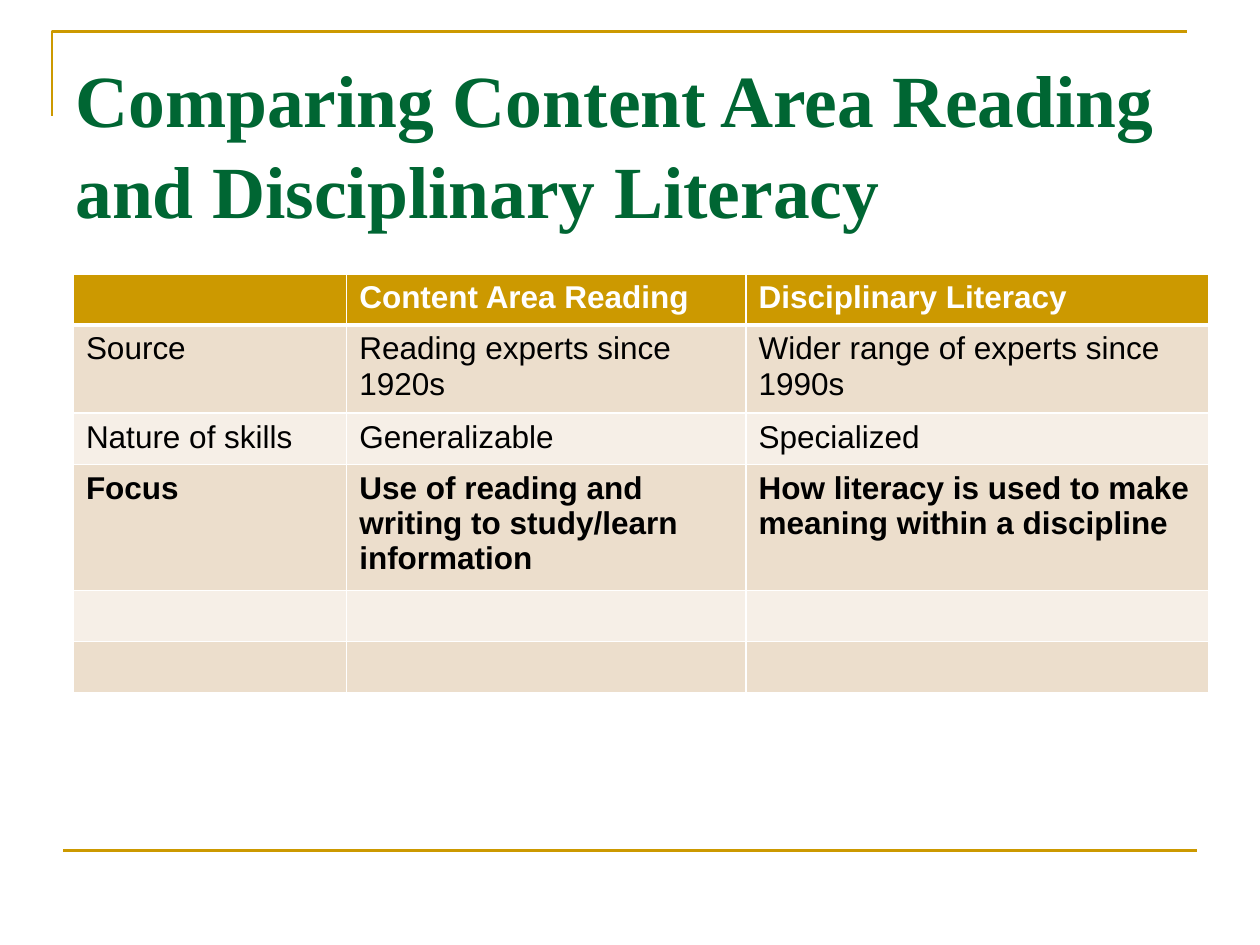
from lxml import etree
from pptx import Presentation
from pptx import util as u
from pptx.dml.color import RGBColor
from pptx.enum import shapes, text
from pptx.oxml import ns

GOLD = RGBColor(0xCC, 0x99, 0x00)
GREEN = RGBColor(0x00, 0x66, 0x33)
WHITE = RGBColor(0xFF, 0xFF, 0xFF)
BLACK = RGBColor(0x00, 0x00, 0x00)
BANDS = RGBColor(0xF6, 0xEF, 0xE7), RGBColor(0xEC, 0xDE, 0xCC)

COLUMNS = [5.51, 8.05, 9.32]
ROW_HEIGHT = 1.03
BOLD_ROWS = {0, 3}
ROWS = [
    ["", "Content Area Reading", "Disciplinary Literacy"],
    ["Source", "Reading experts since 1920s", "Wider range of experts since 1990s"],
    ["Nature of skills", "Generalizable", "Specialized"],
    ["Focus", "Use of reading and writing to study/learn information",
     "How literacy is used to make meaning within a discipline"],
    ["", "", ""],
    ["", "", ""],
]


class Deck:
    """Holds the style and the current slide, and draws each kind of element."""

    def __init__(self, prs):
        self.s = prs.slides.add_slide(prs.slide_layouts[6])
        self.title_font, self.body_font = "Times New Roman", "Arial"
        self.rule = u.Pt(1.5)

    def stroke(self, sp):
        sp.line.color.rgb = GOLD
        sp.line.width = self.rule

    def corner(self, points):
        start, *rest = [(u.Cm(x), u.Cm(y)) for x, y in points]
        fb = self.s.shapes.build_freeform(*start)
        fb.add_line_segments(rest, close=False)
        sp = fb.convert_to_shape()
        sp.shadow.inherit = False
        sp.fill.background()
        self.stroke(sp)

    def line(self, x1, y1, x2, y2):
        sp = self.s.shapes.add_connector(
            shapes.MSO_CONNECTOR.STRAIGHT, u.Cm(x1), u.Cm(y1), u.Cm(x2), u.Cm(y2))
        self.stroke(sp)
        etree.SubElement(sp._element.spPr, ns.qn("a:effectLst"))

    def format(self, p, name, size, color, bold):
        for r in p.runs:
            r.font.name, r.font.size = name, u.Pt(size)
            r.font.color.rgb, r.font.bold = color, bold

    def title(self, words, x, y, w, h):
        tf = self.s.shapes.add_textbox(u.Cm(x), u.Cm(y), u.Cm(w), u.Cm(h)).text_frame
        tf.word_wrap = True
        tf.vertical_anchor = text.MSO_ANCHOR.TOP
        tf.margin_top = u.Cm(0.25)
        tf.text = words
        p = tf.paragraphs[0]
        p.line_spacing = 1.04
        self.format(p, self.title_font, 42, GREEN, True)

    def borders(self, cell, widths):
        tcPr = cell._tc.get_or_add_tcPr()
        for i, (side, width) in enumerate(widths.items()):
            ln = etree.Element(ns.qn(f"a:ln{side}"), w=str(u.Pt(width)))
            fill = etree.SubElement(ln, ns.qn("a:solidFill"))
            etree.SubElement(fill, ns.qn("a:srgbClr"), val=str(WHITE))
            tcPr.insert(i, ln)

    def table(self, rows, x, y):
        tbl = self.s.shapes.add_table(
            len(rows), len(COLUMNS), u.Cm(x), u.Cm(y),
            u.Cm(sum(COLUMNS)), u.Cm(ROW_HEIGHT * len(rows))).table
        for col, width in zip(tbl.columns, COLUMNS):
            col.width = u.Cm(width)
        for i, row in enumerate(rows):
            tbl.rows[i].height = u.Cm(ROW_HEIGHT)
            for j, words in enumerate(row):
                cell = tbl.cell(i, j)
                cell.text = words
                self.format(cell.text_frame.paragraphs[0], self.body_font, 18,
                            BLACK if i else WHITE, i in BOLD_ROWS)
                cell.fill.solid()
                cell.fill.fore_color.rgb = BANDS[i % 2] if i else GOLD
                self.borders(cell, {"L": 1, "R": 1, "T": 3 if i == 1 else 1,
                                    "B": 1 if i else 3})


def main():
    prs = Presentation()
    prs.slide_width, prs.slide_height = u.Cm(25.4), u.Cm(19.05)
    deck = Deck(prs)
    deck.corner([(1.05, 2.33), (1.05, 0.64), (23.92, 0.64)])
    deck.line(1.27, 17.15, 24.13, 17.15)
    deck.title("Comparing Content Area Reading and Disciplinary Literacy",
               1.27, 0.76, 22.86, 3.18)
    deck.table(ROWS, 1.48, 5.52)
    prs.save("out.pptx")


if __name__ == "__main__":
    main()
